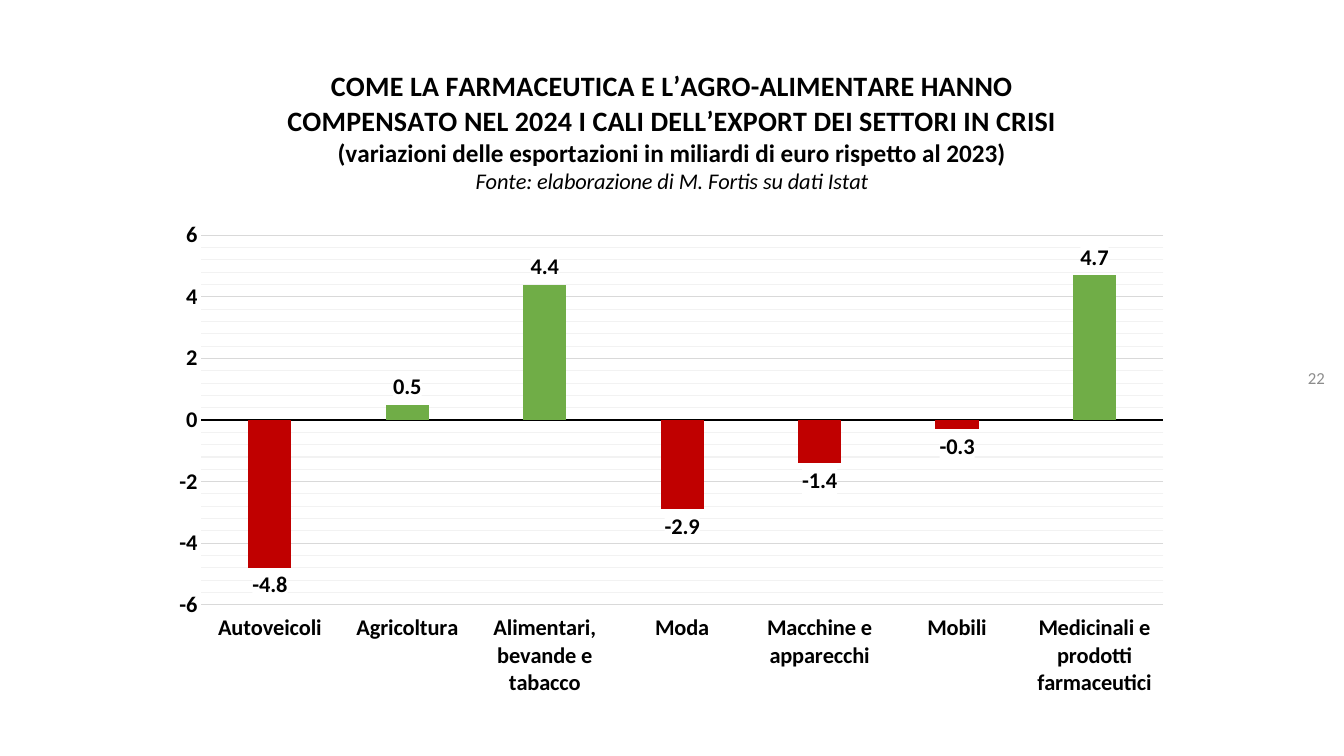
from lxml.etree import SubElement
from pptx import Presentation
from pptx.chart.data import CategoryChartData
from pptx.dml.color import RGBColor
from pptx.enum.chart import XL_CHART_TYPE, XL_LABEL_POSITION, XL_TICK_LABEL_POSITION, XL_TICK_MARK
from pptx.enum.text import MSO_ANCHOR, PP_ALIGN
from pptx.oxml import parse_xml
from pptx.oxml.ns import nsdecls, qn
from pptx.util import Inches, Pt

BLACK = RGBColor(0x00, 0x00, 0x00)
WHITE = RGBColor(0xFF, 0xFF, 0xFF)
GRAY = RGBColor(0x8C, 0x8C, 0x8C)
MAJOR_GRID = RGBColor(0xD9, 0xD9, 0xD9)
MINOR_GRID = RGBColor(0xF2, 0xF2, 0xF2)
RED = RGBColor(0xC0, 0x00, 0x00)
GREEN = RGBColor(0x70, 0xAD, 0x47)

EXPORT_CHANGES = {
    "Autoveicoli": -4.8,
    "Agricoltura": 0.5,
    "Alimentari, bevande e tabacco": 4.4,
    "Moda": -2.9,
    "Macchine e apparecchi": -1.4,
    "Mobili": -0.3,
    "Medicinali e prodotti farmaceutici": 4.7,
}
TITLE_LINES = [
    ("COME LA FARMACEUTICA E L’AGRO-ALIMENTARE HANNO COMPENSATO NEL 2024 "
     "I CALI DELL’EXPORT DEI SETTORI IN CRISI", 20, True, False),
    ("(variazioni delle esportazioni in miliardi di euro rispetto al 2023)", 18, True, False),
    ("Fonte: elaborazione di M. Fortis su dati Istat", 16, False, True),
]
PLOT_LAYOUT = {"layoutTarget": "inner", "xMode": "edge", "yMode": "edge",
               "x": 0.04, "y": 0.285, "w": 0.94, "h": 0.555}


class ExportSlide:
    font_name = "Calibri"

    def __init__(self, deck):
        self.slide = deck.slides.add_slide(deck.slide_layouts[6])

    def style(self, font, size, color=BLACK, bold=False, italic=False):
        font.name = self.font_name
        font.size = Pt(size)
        font.bold = bold
        font.italic = italic
        font.color.rgb = color

    def add_page_number(self, text, left, top, width, height):
        box = self.slide.shapes.add_textbox(Inches(left), Inches(top), Inches(width), Inches(height))
        frame = box.text_frame
        frame.word_wrap = True
        frame.vertical_anchor = MSO_ANCHOR.MIDDLE
        frame.text = text
        para = frame.paragraphs[0]
        para.alignment = PP_ALIGN.RIGHT
        self.style(para.runs[0].font, 12, GRAY)

    def add_column_chart(self, changes, left, top, width, height):
        data = CategoryChartData(number_format="General")
        data.categories = list(changes)
        data.add_series("Series 1", list(changes.values()))
        chart = self.slide.shapes.add_chart(
            XL_CHART_TYPE.COLUMN_CLUSTERED, Inches(left), Inches(top),
            Inches(width), Inches(height), data).chart
        self.style(chart.font, 10)
        chart.has_legend = False
        self.format_title(chart)
        self.format_axes(chart)
        self.format_columns(chart.plots[0], changes)
        self.place_plot(chart)

    def format_title(self, chart):
        chart.has_title = True
        chart.chart_title.include_in_layout = False
        frame = chart.chart_title.text_frame
        frame.text = "\n".join(line[0] for line in TITLE_LINES)
        for para, (_, size, bold, italic) in zip(frame.paragraphs, TITLE_LINES):
            para.alignment = PP_ALIGN.CENTER
            self.style(para.runs[0].font, size, BLACK, bold, italic)

    def format_axes(self, chart):
        for axis in (chart.category_axis, chart.value_axis):
            axis.major_tick_mark = axis.minor_tick_mark = XL_TICK_MARK.NONE
            self.style(axis.tick_labels.font, 16, bold=True)
        chart.category_axis.tick_label_position = XL_TICK_LABEL_POSITION.LOW
        chart.category_axis.format.line.color.rgb = BLACK
        chart.category_axis.format.line.width = Pt(1.5)
        values = chart.value_axis
        values.minimum_scale, values.maximum_scale = -6, 6
        values.major_unit, values.minor_unit = 2, 0.4
        values.format.line.fill.background()
        values.has_major_gridlines = values.has_minor_gridlines = True
        values.major_gridlines.format.line.color.rgb = MAJOR_GRID
        values.major_gridlines.format.line.width = Pt(0.75)
        minor_gridlines = values._element.find(qn("c:minorGridlines"))
        minor_gridlines.append(parse_xml(
            f'<c:spPr {nsdecls("c", "a")}><a:ln w="{Pt(0.75)}"><a:solidFill>'
            f'<a:srgbClr val="{MINOR_GRID}"/></a:solidFill></a:ln></c:spPr>'))

    def format_columns(self, plot, changes):
        plot.gap_width = 219
        plot.overlap = -27
        plot.vary_by_categories = False
        series = plot.series[0]
        series.invert_if_negative = False
        for index, change in enumerate(changes.values()):
            fill = series.points[index].format.fill
            fill.solid()
            fill.fore_color.rgb = GREEN if change > 0 else RED
        labels = series.data_labels
        labels.show_value = True
        labels.number_format = "0.0"
        labels.number_format_is_linked = False
        labels.position = XL_LABEL_POSITION.OUTSIDE_END
        self.style(labels.font, 16, bold=True)
        text_properties = series._element.find(qn("c:dLbls")).find(qn("c:txPr"))
        text_properties.addprevious(parse_xml(
            f'<c:spPr {nsdecls("c", "a")}><a:solidFill>'
            f'<a:srgbClr val="{WHITE}"/></a:solidFill></c:spPr>'))

    def place_plot(self, chart):
        plot_area = chart._chartSpace.chart.plotArea
        layout = plot_area.find(qn("c:layout"))
        if layout is None:
            layout = parse_xml(f'<c:layout {nsdecls("c")}/>')
            plot_area.insert(0, layout)
        manual = SubElement(layout, qn("c:manualLayout"))
        for name, value in PLOT_LAYOUT.items():
            SubElement(manual, qn(f"c:{name}")).set("val", str(value))


def main():
    deck = Presentation()
    deck.slide_width = Inches(13.33)
    deck.slide_height = Inches(7.5)
    page = ExportSlide(deck)
    page.add_column_chart(EXPORT_CHANGES, 1.59, 0.45, 10.15, 6.61)
    page.add_page_number("22", 10.24, 3.55, 3, 0.4)
    deck.save("out.pptx")


if __name__ == "__main__":
    main()
